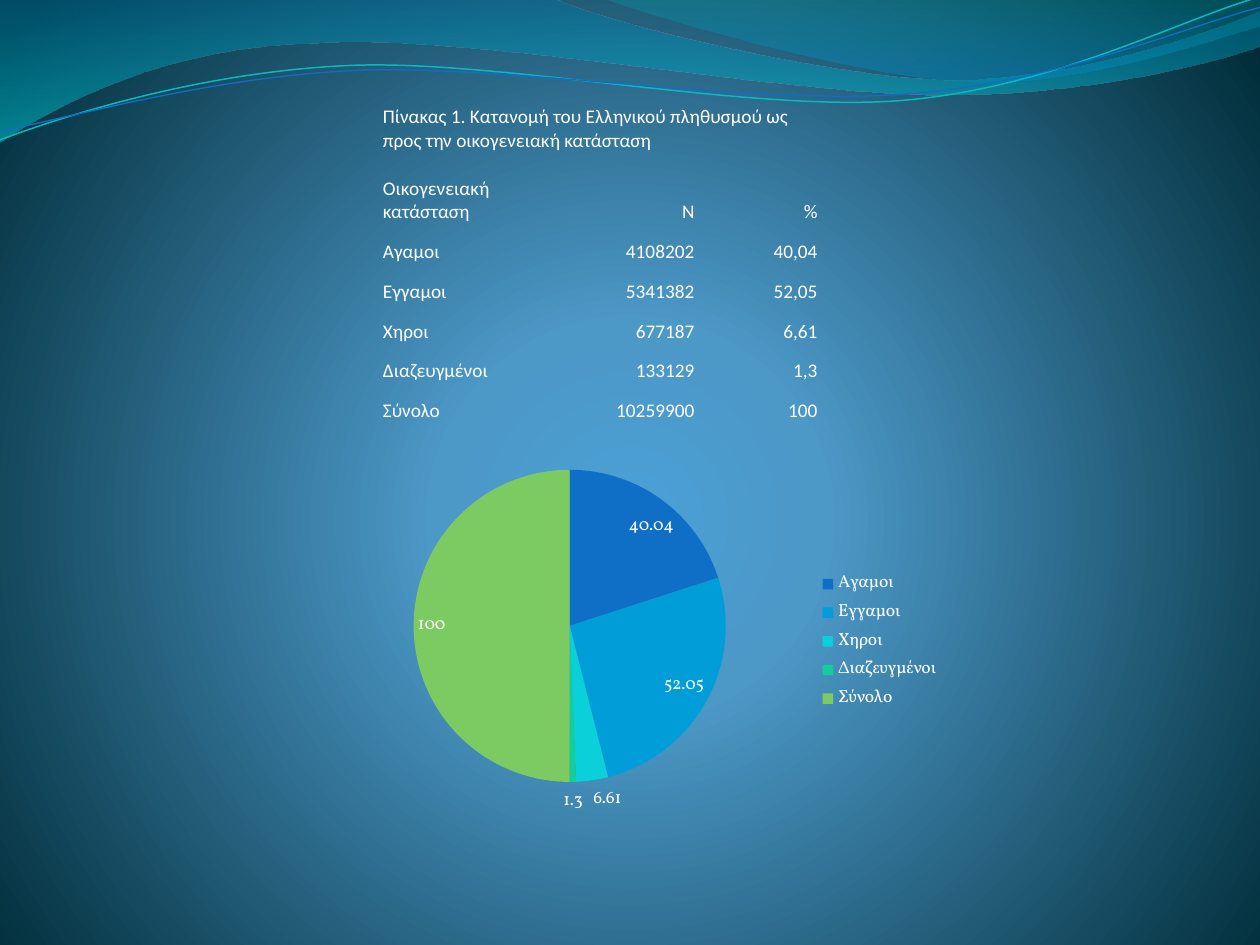
"""Build a slide with a population table and a pie chart over a wavy backdrop."""
import math
from dataclasses import dataclass
from typing import Optional

from lxml import etree
from pptx import Presentation
from pptx import util as u
from pptx.chart.data import CategoryChartData
from pptx.dml.color import RGBColor
from pptx.enum import chart as ch, text
from pptx.oxml import ns

WHITE = RGBColor(0xFF, 0xFF, 0xFF)
BLUE = RGBColor(0x0F, 0x6F, 0xC6)
SKY = RGBColor(0x00, 0x9D, 0xD9)
CYAN = RGBColor(0x0B, 0xD0, 0xD9)
GREEN = RGBColor(0x10, 0xCF, 0x9B)
LIME = RGBColor(0x7C, 0xCA, 0x62)
TEAL = RGBColor(0x0A, 0xB8, 0xBF)
BG_LIGHT = RGBColor(0x4A, 0xA0, 0xD6)
BG_MID = RGBColor(0x4C, 0x98, 0xC7)
BG_DARK = RGBColor(0x00, 0x2C, 0x38)
WAVE_BLUE = RGBColor(0x00, 0x74, 0xA1)
WAVE_CYAN = RGBColor(0x00, 0xC6, 0xCF)
WAVE_TEAL = RGBColor(0x00, 0xA1, 0xA9)
WAVE_SKY = RGBColor(0x00, 0x8B, 0xBF)

LINEAR = '<a:lin ang="5400000" scaled="1"/>'
RADIAL = ('<a:path path="circle"><a:fillToRect l="10000" t="110000" '
          'r="10000" b="100000"/></a:path>')
TILT = 2.7


@dataclass
class Stop:
    pos: int
    color: RGBColor
    alpha: int = 100


@dataclass
class Wave:
    """Outline in cm: a step of one point is straight, a step of three is a curve."""
    start: tuple
    steps: list
    stops: Optional[list] = None
    line: Optional[RGBColor] = None
    width: float = 0
    center: Optional[tuple] = None


WAVES = [
    Wave((0, 0), [
        [(11.18, -0.03)],
        [(12.09, 0.43), (16.87, 1.6), (19.25, 1.6)],
        [(21.67, 1.6), (24.33, 0.66), (25.4, 0.23)],
        [(25.43, 0.91)],
        [(24.97, 1.12), (22.1, 1.93), (18.95, 1.91)],
        [(15.8, 1.91), (9.7, 0.71), (6.53, 0.86)],
        [(3.28, 0.91), (1.17, 2.11), (-0.03, 2.87)],
        [(0, 0)],
    ], stops=[Stop(0, WAVE_BLUE, 45), Stop(100, WAVE_CYAN, 55)]),
    Wave((12.17, -0.03), [
        [(12.93, 0.28), (17.32, 1.57), (19.53, 1.65)],
        [(21.74, 1.75), (24.41, 0.81), (25.4, 0.53)],
        [(25.4, 0)],
        [(12.17, -0.03)],
    ], stops=[Stop(0, WAVE_TEAL, 30), Stop(80, WAVE_SKY, 45)]),
    Wave((0, 2.82), [
        [(1.22, 2.36), (4.01, 1.45), (7.04, 1.32)],
        [(10.03, 1.19), (15.06, 2.26), (18.11, 2.03)],
        [(21.16, 1.8), (23.83, 0.38), (25.35, -0.05)],
    ], line=TEAL, width=0.85, center=(12.67, 1.46)),
    Wave((0, 2.64), [
        [(1.19, 2.44), (4.17, 1.55), (7.19, 1.42)],
        [(10.24, 1.3), (15.16, 2.13), (18.21, 1.9)],
        [(21.23, 1.7), (23.9, 0.53), (25.4, 0.15)],
    ], line=BLUE, width=0.75, center=(12.69, 1.5)),
]

TITLE = "Πίνακας 1. Κατανομή του Ελληνικού πληθυσμού ως προς την οικογενειακή κατάσταση"
ROWS = [
    ("Οικογενειακή κατάσταση", "Ν", "%"),
    ("Αγαμοι", "4108202", "40,04"),
    ("Εγγαμοι", "5341382", "52,05"),
    ("Χηροι", "677187", "6,61"),
    ("Διαζευγμένοι", "133129", "1,3"),
    ("Σύνολο", "10259900", "100"),
]
COL_WIDTHS = [3.84, 2.48, 2.48]
ROW_HEIGHTS = [2.16, 1.45] + [0.8] * 5
SLICE_COLORS = [BLUE, SKY, CYAN, GREEN, LIME]


def gradient(stops: list, shade: str):
    """Return a gradFill element."""
    gs = "".join(
        f'<a:gs pos="{s.pos * 1000}"><a:srgbClr val="{s.color}">'
        f'<a:alpha val="{s.alpha * 1000}"/></a:srgbClr></a:gs>' for s in stops)
    return etree.fromstring(
        f'<a:gradFill {ns.nsdecls("a")} rotWithShape="1"><a:gsLst>{gs}</a:gsLst>{shade}</a:gradFill>')


def set_background(slide, stops: list) -> None:
    """Give the slide a radial gradient background."""
    slide.background.fill.solid()
    solid = slide.background._cSld.find(".//" + ns.qn("a:solidFill"))
    solid.getparent().replace(solid, gradient(stops, RADIAL))


def level(points: list, center: tuple) -> list:
    """Turn points clockwise by the tilt so the shape's rotation restores them."""
    cx, cy = center
    sin, cos = math.sin(math.radians(TILT)), math.cos(math.radians(TILT))
    return [(cx + (x - cx) * cos - (y - cy) * sin, cy + (x - cx) * sin + (y - cy) * cos)
            for x, y in points]


def bend(sp, steps: list) -> None:
    """Join the segments of each three-point step into one Bézier curve."""
    segments = iter(list(sp._element.iter(ns.qn("a:lnTo"))))
    for step in steps:
        parts = [next(segments) for _ in step]
        if len(parts) == 3:
            curve = etree.Element(ns.qn("a:cubicBezTo"))
            parts[0].addprevious(curve)
            for part in parts:
                curve.append(part[0])
                part.getparent().remove(part)


def add_wave(slide, wave: Wave) -> None:
    """Draw a filled wave or an open wavy line."""
    points = [wave.start] + [point for step in wave.steps for point in step]
    if wave.center:
        points = level(points, wave.center)
    points = [(u.Cm(x), u.Cm(y)) for x, y in points]
    builder = slide.shapes.build_freeform(*points[0])
    builder.add_line_segments(points[1:], close=wave.line is None)
    sp = builder.convert_to_shape()
    bend(sp, wave.steps)
    sp.shadow.inherit = False
    sp.fill.background()
    if wave.line is None:
        sp.line.fill.background()
        no_fill = sp._element.spPr.find(ns.qn("a:noFill"))
        no_fill.getparent().replace(no_fill, gradient(wave.stops, LINEAR))
    else:
        sp.line.color.rgb = wave.line
        sp.line.width = u.Pt(wave.width)
        sp.rotation = 360 - TILT


def write(tf, content: str, *, size: float = 11, font: str = "Calibri",
          color: RGBColor = WHITE, align=text.PP_ALIGN.LEFT) -> None:
    """Put formatted text in a text frame."""
    p = tf.paragraphs[0]
    p.alignment = align
    r = p.add_run()
    r.text = content
    r.font.size, r.font.name, r.font.color.rgb = u.Pt(size), font, color


def add_population_table(slide) -> None:
    """Draw the plain table with its title in a merged first row."""
    table = slide.shapes.add_table(
        len(ROW_HEIGHTS), len(COL_WIDTHS), u.Cm(7.7), u.Cm(0.91),
        u.Cm(sum(COL_WIDTHS)), u.Cm(sum(ROW_HEIGHTS))).table
    table.first_row = table.horz_banding = False
    style = table._tbl.tblPr.find(ns.qn("a:tableStyleId"))
    style.text = "{2D5ABB26-0587-4C30-8999-92F81FD0307C}"
    for col, width in zip(table.columns, COL_WIDTHS):
        col.width = u.Cm(width)
    for row, height in zip(table.rows, ROW_HEIGHTS):
        row.height = u.Cm(height)
    for cell in table.iter_cells():
        cell.fill.background()
        cell.vertical_anchor = text.MSO_ANCHOR.BOTTOM
        cell.margin_left = cell.margin_right = cell.margin_top = u.Cm(0.02)
        cell.margin_bottom = 0
    table.cell(0, 0).merge(table.cell(0, 2))
    write(table.cell(0, 0).text_frame, TITLE)
    for i, row in enumerate(ROWS, 1):
        for j, content in enumerate(row):
            align = text.PP_ALIGN.RIGHT if j else text.PP_ALIGN.LEFT
            write(table.cell(i, j).text_frame, content, align=align)


def add_share_pie(slide) -> None:
    """Draw the pie chart of the percentages in the table."""
    data = CategoryChartData()
    data.categories = [row[0] for row in ROWS[1:]]
    data.add_series("Series 1", [float(row[2].replace(",", ".")) for row in ROWS[1:]])
    chart = slide.shapes.add_chart(
        ch.XL_CHART_TYPE.PIE, u.Cm(6.5), u.Cm(9.12), u.Cm(12.7), u.Cm(7.62), data).chart
    chart.has_title = False
    chart.font.size, chart.font.name, chart.font.color.rgb = u.Pt(10), "Vollkorn", WHITE
    chart.has_legend = True
    chart.legend.position = ch.XL_LEGEND_POSITION.RIGHT
    chart.legend.include_in_layout = False
    plot = chart.plots[0]
    plot.vary_by_categories = True
    plot.has_data_labels = True
    plot.data_labels.show_value = True
    plot.data_labels.show_percentage = False
    plot.data_labels.position = ch.XL_LABEL_POSITION.BEST_FIT
    for i, color in enumerate(SLICE_COLORS):
        fmt = plot.series[0].points[i].format
        fmt.fill.solid()
        fmt.fill.fore_color.rgb = color
        fmt.line.fill.background()


def main() -> None:
    """Build and save the slide."""
    prs = Presentation()
    prs.slide_width, prs.slide_height = u.Cm(25.4), u.Cm(19.05)
    s = prs.slides.add_slide(prs.slide_layouts[6])
    set_background(s, [Stop(0, BG_LIGHT), Stop(25, BG_MID), Stop(100, BG_DARK)])
    for wave in WAVES:
        add_wave(s, wave)
    add_population_table(s)
    add_share_pie(s)
    prs.save("out.pptx")


if __name__ == "__main__":
    main()
